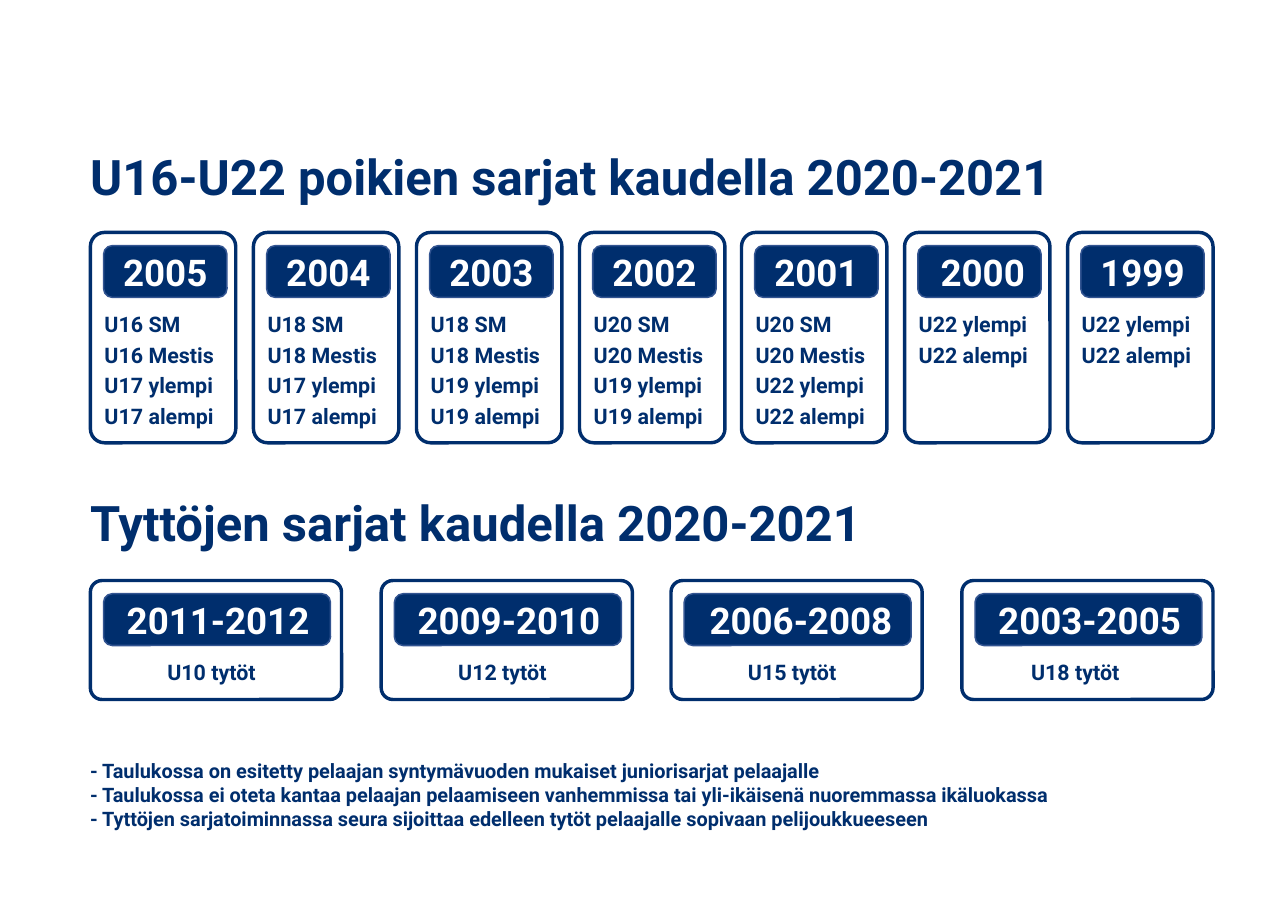
"""Build the slide of junior hockey series by birth year, season 2020-2021."""
from pptx import Presentation
from pptx.dml.color import RGBColor
from pptx.enum.shapes import MSO_SHAPE
from pptx.enum.text import MSO_AUTO_SIZE, PP_ALIGN
from pptx.util import Pt

PX = 9144
NAVY, EDGE, WHITE = "002E6D", "325491", "FFFFFF"
LEFT, CENTER = PP_ALIGN.LEFT, PP_ALIGN.CENTER

prs = Presentation()
prs.slide_width, prs.slide_height = 1169 * PX, 827 * PX
s = prs.slides.add_slide(prs.slide_layouts[6])


def add_text(text, x, y, w, h, size, color=NAVY, align=LEFT, spacing=None, wrap=True):
    tf = s.shapes.add_textbox(x * PX, y * PX, w * PX, h * PX).text_frame
    tf.word_wrap = wrap
    tf.auto_size = MSO_AUTO_SIZE.SHAPE_TO_FIT_TEXT
    for i, line in enumerate(text.split("\n")):
        p = tf.paragraphs[0] if i == 0 else tf.add_paragraph()
        p.alignment = align
        if spacing:
            p.line_spacing = Pt(spacing)
        r = p.add_run()
        r.text = line
        r.font.name, r.font.size, r.font.bold = "Roboto", Pt(size), True
        r.font.color.rgb = RGBColor.from_string(color)


def add_box(x, y, w, h, line, weight, fill=None, adj=None):
    sp = s.shapes.add_shape(MSO_SHAPE.ROUNDED_RECTANGLE, x * PX, y * PX, w * PX, h * PX)
    sp.shadow.inherit = False
    if fill:
        sp.fill.solid()
        sp.fill.fore_color.rgb = RGBColor.from_string(fill)
    else:
        sp.fill.background()
    sp.line.color.rgb = RGBColor.from_string(line)
    sp.line.width = Pt(weight)
    if adj:
        sp.adjustments[0] = adj


boys = [
    ("2005", 108, LEFT, "U16 SM\nU16 Mestis\nU17 ylempi\nU17 alempi"),
    ("2004", 108, LEFT, "U18 SM\nU18 Mestis\nU17 ylempi\nU17 alempi"),
    ("2003", 108, LEFT, "U18 SM\nU18 Mestis\nU19 ylempi\nU19 alempi"),
    ("2002", 108, LEFT, "U20 SM\nU20 Mestis\nU19 ylempi\nU19 alempi"),
    ("2001", 108, LEFT, "U20 SM\nU20 Mestis\nU22 ylempi\nU22 alempi"),
    ("2000", 114, LEFT, "U22 ylempi\nU22 alempi"),
    ("1999", 108, LEFT, "U22 ylempi\nU22 alempi"),
]
girls = [
    ("2011-2012", 204, CENTER, "U10 tytöt"),
    ("2009-2010", 204, CENTER, "U12 tytöt"),
    ("2006-2008", 208, CENTER, "U15 tytöt"),
    ("2003-2005", 204, LEFT, "U18 tytöt"),
]
rows = [
    ("U16-U22 poikien sarjat kaudella 2020-2021", 128, boys, 211, 132, 191, 112, 3, 126),
    ("Tyttöjen sarjat kaudella 2020-2021", 442, girls, 527, 228, 108, 206, 53, 114),
]
START, END = 82, 1101

for title, title_y, cards, y, w, h, badge_w, list_dx, list_w in rows:
    add_text(title, 72, title_y, 964, 64, 32)
    for i, (years, years_w, align, series) in enumerate(cards):
        x = START + round(i * (END - START - w) / (len(cards) - 1))
        add_box(x + 12, y + 12, badge_w, 47, EDGE, 1, fill=NAVY)
        add_text(years, x + 14, y + 11, years_w, 50, 24, color=WHITE, align=CENTER)
        add_box(x, y, w, h, NAVY, 2.25, adj=0.097)
        list_h = 40 + 28 * len(series.split("\n"))
        add_text(series, x + list_dx, y + 62, list_w, list_h, 14,
                 align=align, spacing=20, wrap=False)

notes = """- Taulukossa on esitetty pelaajan syntymävuoden mukaiset juniorisarjat pelaajalle
- Taulukossa ei oteta kantaa pelaajan pelaamiseen vanhemmissa tai yli-ikäisenä nuoremmassa ikäluokassa
- Tyttöjen sarjatoiminnassa seura sijoittaa edelleen tytöt pelaajalle sopivaan pelijoukkueeseen"""
add_text(notes, 72, 684, 976, 106, 13)

prs.save("out.pptx")
